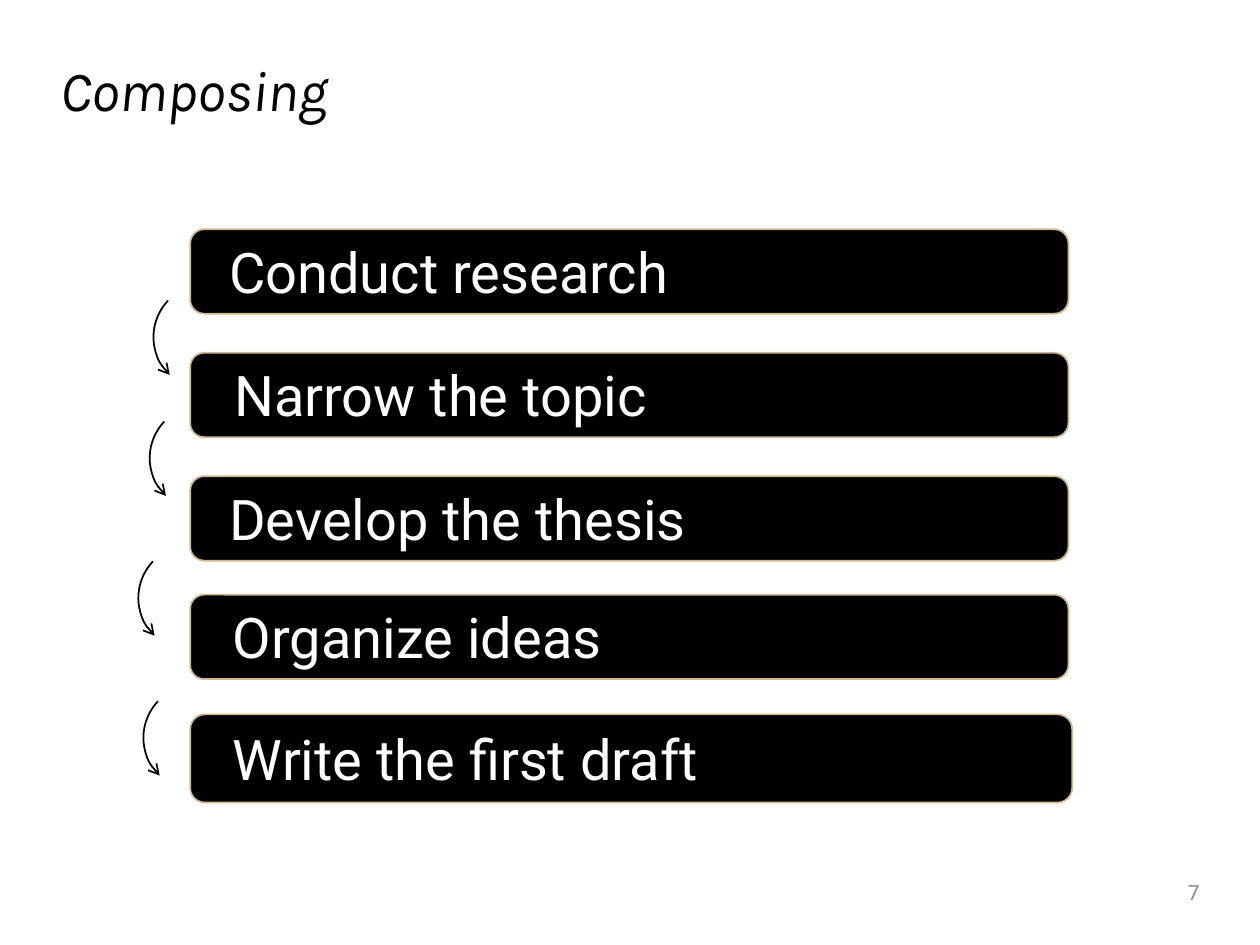
from typing import NamedTuple

from lxml.etree import SubElement
from pptx import Presentation
from pptx.dml.color import RGBColor
from pptx.enum.shapes import MSO_SHAPE
from pptx.enum.text import MSO_ANCHOR, PP_ALIGN
from pptx.oxml.ns import qn
from pptx.util import Inches, Pt

HUES = {"page": "FEFFFF", "ink": "000000", "text": "FFFFFF",
        "edge": "CFB891", "num": "8C8C8C"}
COLS, ROWS = 100, 75
WIDE, HIGH = Inches(10), Inches(7.5)
LEFT, TURN = 15.1, 223.4


class Box(NamedTuple):
    """Left, top, width and height in grid units."""
    x: float
    y: float
    w: float
    h: float

    def place(self) -> tuple:
        col, row = WIDE / COLS, HIGH / ROWS
        return (round(self.x * col), round(self.y * row),
                round(self.w * col), round(self.h * row))


class Step(NamedTuple):
    text: str
    top: float
    inset: float
    span: float
    wide: float = 69.7
    high: float = 6.7


STEPS = [
    Step("Conduct research", 18.2, 2.1, 38.7),
    Step("Narrow the topic", 28, 2.5, 38.9),
    Step("Develop the thesis", 37.8, 2.1, 38.9),
    Step("Organize ideas", 47.2, 2.4, 33.8),
    Step("Write the first draft", 56.7, 2.4, 41.7, 70, 7),
]
ARCS = [Box(x, y, 8.3, 8.4) for x, y in
        [(12.2, 22.5), (11.9, 32.1), (11, 43.2), (11.4, 54.3)]]


def hue(name: str) -> RGBColor:
    return RGBColor.from_string(HUES[name])


def write(shape, text: str, color: str, para: dict, font: dict,
          anchor=MSO_ANCHOR.MIDDLE) -> None:
    frame = shape.text_frame
    frame.word_wrap = True
    frame.vertical_anchor = anchor
    frame.text = text
    line = frame.paragraphs[0]
    for key, val in para.items():
        setattr(line, key, val)
    face = line.runs[0].font
    for key, val in font.items():
        setattr(face, key, val)
    face.color.rgb = hue(color)


def add_form(shapes, kind, box: Box, fill: str = "", edge: str = ""):
    form = shapes.add_shape(kind, *box.place())
    form.shadow.inherit = False
    for name, part in ((fill, form.fill), (edge, form.line.fill)):
        if name:
            part.solid()
            part.fore_color.rgb = hue(name)
        else:
            part.background()
    if edge:
        form.line.width = Pt(1)
    return form


def add_step(slide, step: Step) -> None:
    shapes = slide.shapes.add_group_shape().shapes
    add_form(shapes, MSO_SHAPE.ROUNDED_RECTANGLE,
             Box(LEFT, step.top, step.wide, step.high), "ink", "edge")
    high = 6.4
    label = add_form(shapes, MSO_SHAPE.RECTANGLE,
                     Box(LEFT + step.inset, step.top + (step.high - high) / 2,
                         step.span, high), "ink")
    write(label, step.text, "text", {"alignment": PP_ALIGN.LEFT},
          {"name": "Roboto", "size": Pt(32)}, MSO_ANCHOR.TOP)


def add_arc(slide, box: Box) -> None:
    arc = add_form(slide.shapes, MSO_SHAPE.ARC, box, edge="ink")
    arc.rotation = TURN
    SubElement(arc.line._get_or_add_ln(), qn("a:headEnd"), type="arrow")


def main() -> None:
    deck = Presentation()
    deck.slide_width, deck.slide_height = WIDE, HIGH
    slide = deck.slides.add_slide(deck.slide_layouts[5])
    back = slide.background.fill
    back.solid()
    back.fore_color.rgb = hue("page")

    title = slide.shapes.title
    title.left, title.top, title.width, title.height = Box(
        3.8, 4.2, 92.4, 6.4).place()
    write(title, "Composing", "ink",
          {"alignment": PP_ALIGN.LEFT, "line_spacing": 0.9},
          {"name": "Karla", "size": Pt(32.4), "italic": True})
    page = slide.shapes.add_textbox(*Box(84.2, 68.8, 12, 4).place())
    write(page, "7", "num", {"alignment": PP_ALIGN.RIGHT},
          {"name": "Roboto", "size": Pt(12)})

    for step in STEPS:
        add_step(slide, step)
    for box in ARCS:
        add_arc(slide, box)
    deck.save("out.pptx")


if __name__ == "__main__":
    main()
